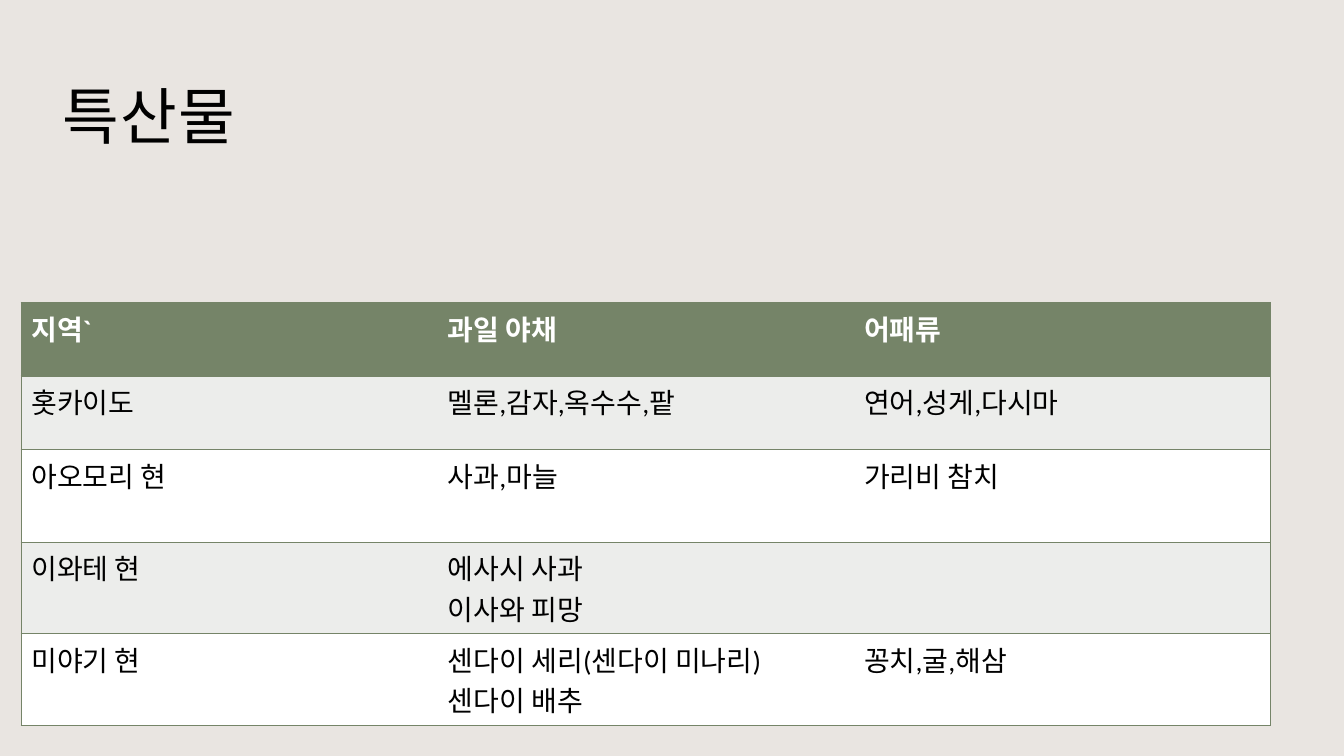
import pptx
import pptx.dml.color
import pptx.enum.text
import pptx.oxml
import pptx.oxml.ns
import pptx.util
from pptx.util import Inches

FONT = "Calibri"
GREEN, PALE, WHITE, BLACK = "758468", "ECEDEB", "FFFFFF", "000000"
BACKGROUND = "E9E5E1"

COLUMN_WIDTH = 4.13
ROW_HEIGHTS = [0.73, 0.73, 0.92, 0.9, 0.91]
ROWS = [
    ["지역`", "과일 야채", "어패류"],
    ["홋카이도", "멜론,감자,옥수수,팥", "연어,성게,다시마"],
    ["아오모리 현", "사과,마늘", "가리비 참치"],
    ["이와테 현", "에사시 사과\n이사와 피망", ""],
    ["미야기 현", "센다이 세리(센다이 미나리)\n센다이 배추", "꽁치,굴,해삼"],
]


def rgb(color):
    return pptx.dml.color.RGBColor.from_string(color)


def set_attributes(target, values):
    for name, value in values.items():
        setattr(target, name, value)


def format_text(tf, size, color, bold=False):
    for p in tf.paragraphs:
        set_attributes(p.font, {"name": FONT, "size": pptx.util.Pt(size), "bold": bold})
        p.font.color.rgb = rgb(color)
        for r in p.runs:
            set_attributes(r.font, {"name": FONT, "size": pptx.util.Pt(size), "bold": bold})
            r.font.color.rgb = rgb(color)


def set_borders(cell, visible):
    """Draw 1 pt lines on the sides named in visible and hide the others."""
    tcPr = cell._tc.get_or_add_tcPr()
    for side in "LRTB":
        fill = f'<a:solidFill><a:srgbClr val="{GREEN}"/></a:solidFill>' if side in visible else "<a:noFill/>"
        tcPr.append(pptx.oxml.parse_xml(
            f'<a:ln{side} {pptx.oxml.ns.nsdecls("a")} w="12700">{fill}</a:ln{side}>'))


def add_title(slide, text, left, top, width, height):
    title = slide.shapes.title
    set_attributes(title, {"left": Inches(left), "top": Inches(top),
                           "width": Inches(width), "height": Inches(height)})
    tf = title.text_frame
    tf.text = text
    set_attributes(tf, {
        "margin_left": Inches(0.12), "margin_right": Inches(0.12),
        "margin_top": Inches(0.12), "margin_bottom": Inches(0.1),
        "vertical_anchor": pptx.enum.text.MSO_ANCHOR.MIDDLE, "word_wrap": True})
    tf.paragraphs[0].alignment = pptx.enum.text.PP_ALIGN.LEFT
    format_text(tf, 44, BLACK)
    tf.paragraphs[0].runs[0].font._element.set("spc", "100")


def add_products_table(slide, left, top):
    last = len(ROWS[0]) - 1
    table = slide.shapes.add_table(
        len(ROWS), last + 1, Inches(left), Inches(top),
        Inches(COLUMN_WIDTH * (last + 1)), Inches(sum(ROW_HEIGHTS))).table
    for column in table.columns:
        column.width = Inches(COLUMN_WIDTH)
    for i, texts in enumerate(ROWS):
        table.rows[i].height = Inches(ROW_HEIGHTS[i])
        header = i == 0
        fill = GREEN if header else PALE if i % 2 else WHITE
        for j, text in enumerate(texts):
            cell = table.cell(i, j)
            cell.text = text
            format_text(cell.text_frame, 20, WHITE if header else BLACK, header)
            set_borders(cell, "TB" + ("L" if j == 0 else "R" if j == last else ""))
            cell.fill.solid()
            cell.fill.fore_color.rgb = rgb(fill)


def main():
    prs = pptx.Presentation()
    set_attributes(prs, {"slide_width": Inches(13.33), "slide_height": Inches(7.5)})
    slide = prs.slides.add_slide(prs.slide_layouts.get_by_name("Title Only"))
    slide.background.fill.solid()
    slide.background.fill.fore_color.rgb = rgb(BACKGROUND)
    add_title(slide, "특산물", 0.5, 0.4, 11.92, 1.45)
    add_products_table(slide, 0.21, 3)
    prs.save("out.pptx")


if __name__ == "__main__":
    main()
